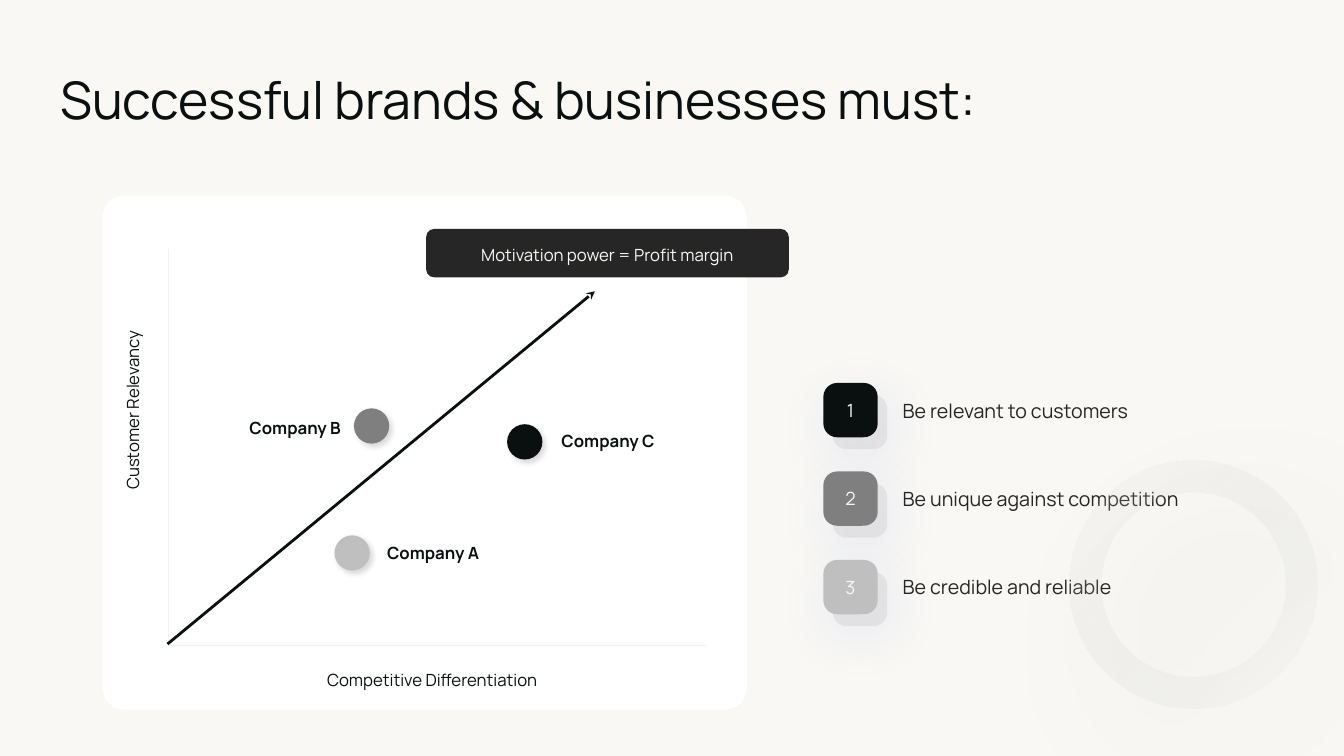
from lxml.etree import SubElement
from pptx import Presentation
from pptx.dml.color import RGBColor
from pptx.enum.shapes import MSO_CONNECTOR, MSO_SHAPE as Shape
from pptx.enum.text import MSO_ANCHOR as Anchor, MSO_AUTO_SIZE as AutoSize, PP_ALIGN as Align
from pptx.oxml.ns import qn
from pptx.util import Cm, Pt

INK, CHARCOAL, GREY, SILVER = "09100F", "262626", "7F7F7F", "BFBFBF"
CREAM, WHITE, AXIS, TILE = "F9F8F5", "FFFFFF", "F2F2F2", "B5B7B7"
TEXT_INSETS = (0.25, 0.13)
# colour, opacity %, blur pt, distance pt, direction in degrees
DOT_SHADOW = ("000000", 15, 4, 3, 45)
TILE_SHADOW = ("3553D3", 45, 45, 4, 90)
RING_SHADOW = ("000000", 40, 100, 65, 45)


def rgb(value):
    return RGBColor.from_string(value)


def add_colour(parent, colour, opacity):
    node = SubElement(parent, qn("a:srgbClr"), val=colour)
    SubElement(node, qn("a:alpha"), val=str(opacity * 1000))


class Deck:
    """Holds the type style and the slide being built; lengths are in cm."""

    font = "Manrope"

    def __init__(self, width, height):
        self.prs = Presentation()
        self.prs.slide_width, self.prs.slide_height = Cm(width), Cm(height)

    def new_slide(self, background):
        self.slide = self.prs.slides.add_slide(self.prs.slide_layouts[5])
        fill = self.slide.background.fill
        fill.solid()
        fill.fore_color.rgb = rgb(background)

    def set_text(self, shape, text, size, colour, align=Align.LEFT, anchor=Anchor.MIDDLE,
                 insets=(0, 0), bold=False):
        """Fill a shape with one styled run and return its paragraph."""
        frame = shape.text_frame
        frame.word_wrap = True
        frame.vertical_anchor = anchor
        frame.margin_left = frame.margin_right = Cm(insets[0])
        frame.margin_top = frame.margin_bottom = Cm(insets[1])
        paragraph = frame.paragraphs[0]
        paragraph.alignment = align
        run = paragraph.add_run()
        run.text = text
        run.font.name, run.font.size, run.font.bold = self.font, Pt(size), bold
        run.font.color.rgb = rgb(colour)
        return paragraph

    def title(self, text, box, size):
        holder = self.slide.shapes.title
        holder.left, holder.top, holder.width, holder.height = map(Cm, box)
        paragraph = self.set_text(holder, text, size, INK, anchor=Anchor.TOP)
        paragraph.space_after = Pt(13)
        holder.text_frame.auto_size = AutoSize.NONE

    def text(self, text, box, size, colour=INK, rotation=0, **style):
        label = self.slide.shapes.add_textbox(*map(Cm, box))
        label.rotation = rotation
        self.set_text(label, text, size, colour, **style)
        label.text_frame.auto_size = AutoSize.SHAPE_TO_FIT_TEXT

    def shape(self, kind, box, fill, corner=None, opacity=100, shadow=None):
        shape = self.slide.shapes.add_shape(kind, *map(Cm, box))
        if corner is not None:
            shape.adjustments[0] = corner
        shape.fill.solid()
        shape.fill.fore_color.rgb = rgb(fill)
        shape.line.fill.background()
        shape.shadow.inherit = False
        properties = shape.element.spPr
        if opacity < 100:
            colour_node = properties.find(qn("a:solidFill")).find(qn("a:srgbClr"))
            SubElement(colour_node, qn("a:alpha"), val=str(opacity * 1000))
        if shadow:
            colour, strength, blur, distance, angle = shadow
            outer = SubElement(properties.find(qn("a:effectLst")), qn("a:outerShdw"),
                               blurRad=str(Pt(blur)), dist=str(Pt(distance)),
                               dir=str(angle * 60000), algn="ctr", rotWithShape="0")
            add_colour(outer, colour, strength)
        return shape

    def fade(self, shape, stops, angle):
        """Swap a solid fill for a gradient of (position %, colour, opacity %) stops."""
        properties = shape.element.spPr
        gradient = SubElement(properties, qn("a:gradFill"), rotWithShape="1")
        stop_list = SubElement(gradient, qn("a:gsLst"))
        for position, colour, opacity in stops:
            stop = SubElement(stop_list, qn("a:gs"), pos=str(position * 1000))
            add_colour(stop, colour, opacity)
        SubElement(gradient, qn("a:lin"), ang=str(angle * 60000), scaled="0")
        properties.replace(properties.find(qn("a:solidFill")), gradient)

    def line(self, start, end, colour, width, arrow=False):
        line = self.slide.shapes.add_connector(
            MSO_CONNECTOR.STRAIGHT, *map(Cm, start + end))
        line.line.color.rgb = rgb(colour)
        line.line.width = Pt(width)
        properties = line.element.spPr
        if arrow:
            SubElement(properties.find(qn("a:ln")), qn("a:tailEnd"), type="stealth")
        SubElement(properties, qn("a:effectLst"))


def build_chart(deck):
    deck.shape(Shape.ROUNDED_RECTANGLE, (2.59, 4.93, 16.23, 12.95), WHITE, 0.042)
    deck.text("Customer Relevancy", (0.99, 10.08, 4.7, 0.51), 12,
              rotation=270, align=Align.CENTER)
    deck.text("Competitive Differentiation", (7.82, 16.87, 6.15, 0.51), 12,
              align=Align.CENTER)
    companies = [
        ("Company B", (8.92, 10.29), GREY, (5.82, 10.52), Align.RIGHT),
        ("Company A", (8.43, 13.49), SILVER, (9.53, 13.67), Align.CENTER),
        ("Company C", (12.78, 10.69), INK, (13.94, 10.85), Align.CENTER),
    ]
    for company, dot, colour, label, align in companies:
        deck.shape(Shape.OVAL, dot + (0.89, 0.89), colour, shadow=DOT_SHADOW)
        deck.text(company, label + (2.77, 0.51), 12, align=align, bold=True)
    callout = deck.shape(Shape.ROUNDED_RECTANGLE, (10.74, 5.77, 9.14, 1.22),
                         CHARCOAL, 0.167)
    formula = deck.set_text(callout, "Motivation power = Profit margin", 12, CREAM,
                            align=Align.CENTER)
    formula.line_spacing = 1.17
    deck.line((4.24, 6.27), (4.24, 16.26), AXIS, 0.75)
    deck.line((17.78, 16.26), (4.27, 16.26), AXIS, 0.75)
    deck.line((4.22, 16.23), (14.99, 7.34), INK, 2, arrow=True)


def build_requirements(deck):
    requirements = [
        ("Be relevant to customers", INK, 7.7),
        ("Be unique against competition", GREY, 8.79),
        ("Be credible and reliable", SILVER, 7.42),
    ]
    badge_left, badge_top, side, pitch = 20.75, 9.65, 1.37, 2.23
    for number, (requirement, colour, width) in enumerate(requirements, 1):
        top = badge_top + (number - 1) * pitch
        deck.shape(Shape.ROUNDED_RECTANGLE, (badge_left + 0.24, top + 0.3, side, side),
                   TILE, 0.255, opacity=25, shadow=TILE_SHADOW)
        badge = deck.shape(Shape.ROUNDED_RECTANGLE, (badge_left, top, side, side),
                           colour, 0.255)
        deck.set_text(badge, str(number), 13, CREAM, align=Align.CENTER,
                      insets=TEXT_INSETS)
        deck.text(requirement, (22.5, top + 0.26, width, 0.86), 14, CHARCOAL,
                  anchor=Anchor.TOP, insets=TEXT_INSETS)


def main():
    deck = Deck(33.87, 19.05)
    deck.new_slide(CREAM)
    deck.title("Successful brands & businesses must:", (1.52, 1.7, 31.24, 1.73), 37)
    build_chart(deck)
    build_requirements(deck)
    ring = deck.shape(Shape.DONUT, (26.95, 11.61, 6.25, 6.25), GREY, 0.129,
                      shadow=RING_SHADOW)
    deck.fade(ring, [(0, "EEEEEE", 20), (2, "EEEEEE", 20), (100, GREY, 0)], 45)
    deck.prs.save("out.pptx")


if __name__ == "__main__":
    main()
